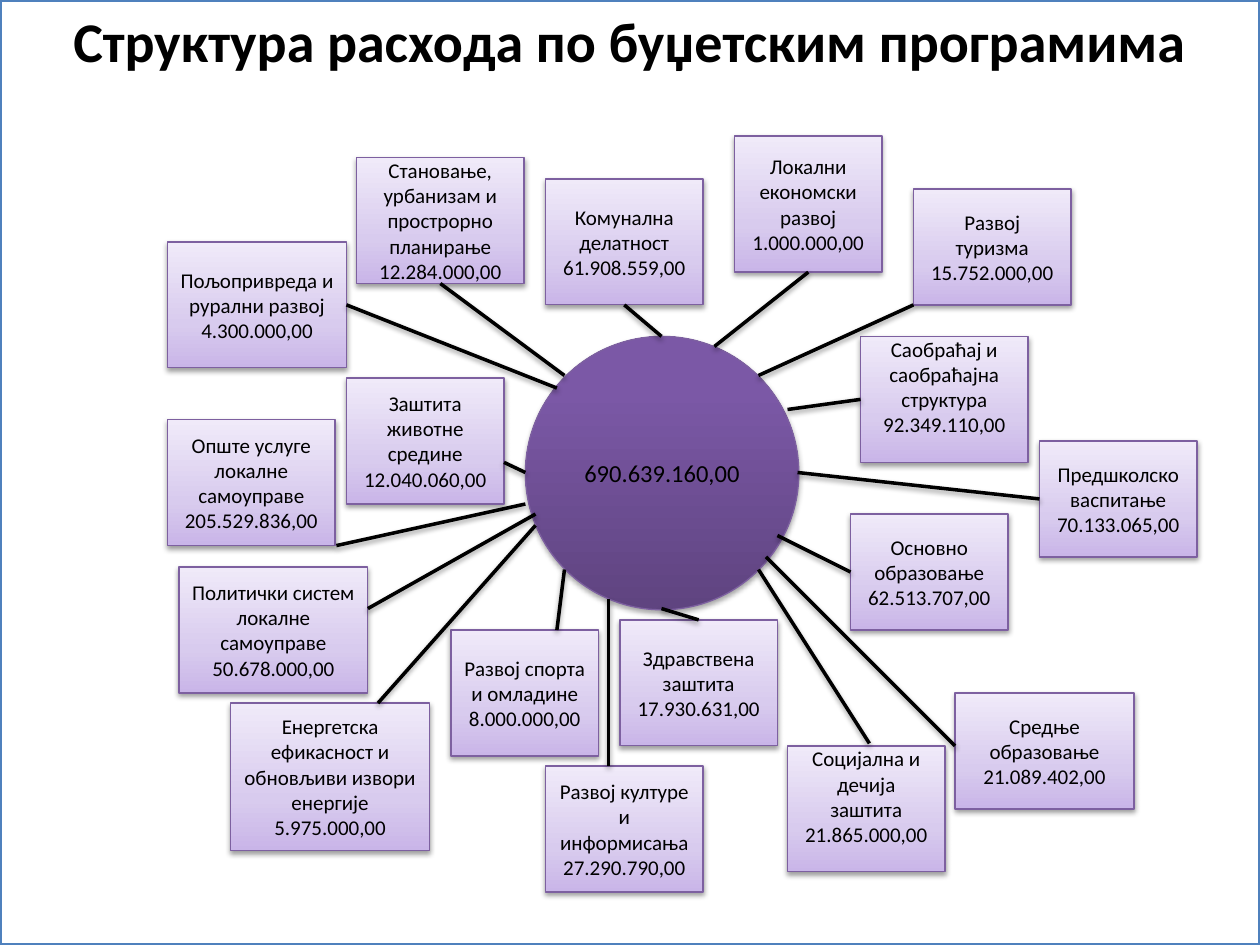
import pptx
import pptx.util
import pptx.dml.color
import pptx.enum.shapes
import pptx.enum.text
import lxml.etree

Inches, Pt = pptx.util.Inches, pptx.util.Pt
RGB = pptx.dml.color.RGBColor.from_string
KIND = pptx.enum.shapes.MSO_SHAPE
ANCHOR = pptx.enum.text.MSO_ANCHOR
CENTER = pptx.enum.text.PP_ALIGN.CENTER
NS = "http://schemas.openxmlformats.org/drawingml/2006/main"

HEX = {"page": "FFFFFF", "frame": "4F81BD", "ink": "000000", "edge": "7D60A0"}
GRADS = {
    "hub": [(0, "5F4480"), (80, "7B58A6"), (100, "7C57A8")],
    "box": [(0, "C9B5E8"), (35, "D8CBEE"), (100, "F0EAF9")],
}
TITLE = "Структура расхода по буџетским програмима"
TOTAL = "690.639.160,00"
HUB = (4.17, 2.67, 2.17, 2.17)
TOP, LEFT, BOTTOM, RIGHT = range(4)

# text, box (left, top, width, height), box side or point, hub point
ITEMS = [
    ("Становање,\nурбанизам и прострорно планирање 12.284.000,00",
     (2.83, 1.25, 1.33, 1), BOTTOM, (4.48, 2.98)),
    ("Комунална делатност 61.908.559,00",
     (4.33, 1.42, 1.25, 1), BOTTOM, (5.25, 2.67)),
    ("Саобраћај и саобраћајна структура\n92.349.110,00",
     (6.83, 2.67, 1.33, 1), LEFT, (6.25, 3.25)),
    ("Локални економски развој 1.000.000,00",
     (5.83, 1.08, 1.17, 1.08), BOTTOM, (5.67, 2.75)),
    ("Пољопривреда и рурални развој 4.300.000,00",
     (1.33, 1.92, 1.42, 1), RIGHT, (4.42, 3.08)),
    ("Опште услуге локалне самоуправе\n205.529.836,00",
     (1.33, 3.33, 1.33, 1), (2.67, 4.33), (4.17, 4)),
    ("Заштита животне средине 12.040.060,00",
     (2.75, 3, 1.25, 1), (4, 3.67), (4.17, 3.75)),
    ("Политички систем локалне самоуправе\n50.678.000,00",
     (1.42, 4.5, 1.5, 1), (2.92, 4.83), (4.25, 4.08)),
    ("Енергетска ефикасност и обновљиви извори енергије\n5.975.000,00",
     (1.83, 5.58, 1.58, 1.17), (3, 5.58), (4.25, 4.17)),
    ("Предшколско васпитање\n70.133.065,00",
     (8.25, 3.5, 1.25, 0.92), LEFT, (6.33, 3.75)),
    ("Основно образовање\n62.513.707,00",
     (6.75, 4.08, 1.25, 0.92), LEFT, (6.17, 4.25)),
    ("Развој туризма\n15.752.000,00",
     (7.25, 1.5, 1.25, 0.92), (7.25, 2.42), (6.02, 2.98)),
    ("Развој културе и информисања\n27.290.790,00",
     (4.33, 6.08, 1.25, 1), (4.83, 6.08), (4.83, 4.75)),
    ("Здравствена заштита\n17.930.631,00",
     (4.92, 4.92, 1.25, 1), TOP, (5.25, 4.83)),
    ("Развој спорта и омладине\n8.000.000,00",
     (3.58, 5, 1.17, 1), (4.42, 5), (4.48, 4.52)),
    ("Социјална и дечија заштита\n21.865.000,00",
     (6.25, 5.92, 1.25, 1), (6.9, 5.9), (6.02, 4.52)),
    ("Средње образовање 21.089.402,00",
     (7.58, 5.5, 1.42, 0.92), (7.58, 5.92), (6.08, 4.42)),
]
RAISED = {"Саобраћај", "Социјална"}


def apply(item, form):
    for key, value in form.items():
        setattr(item, key, value)


def place(item, spot):
    apply(item, dict(zip(("left", "top", "width", "height"), map(Inches, spot))))


def write(shape, text, size, anchor, bold=False):
    frame = shape.text_frame
    frame.text = text
    apply(frame, {"word_wrap": True, "vertical_anchor": anchor,
                  "auto_size": pptx.enum.text.MSO_AUTO_SIZE.NONE})
    for para in frame.paragraphs:
        para.alignment = CENTER
        apply(para.runs[0].font, {"size": Pt(size), "name": "Calibri", "bold": bold})
        para.runs[0].font.color.rgb = RGB(HEX["ink"])


def rule(item, color, width):
    item.line.color.rgb = RGB(HEX[color])
    item.line.width = Pt(width)


def shade(props, alpha, dist):
    props.append(lxml.etree.fromstring(
        f'<a:effectLst xmlns:a="{NS}"><a:outerShdw blurRad="{Pt(3.1)}" '
        f'dist="{Pt(dist)}" dir="5400000" rotWithShape="0"><a:srgbClr val="{HEX["ink"]}">'
        f'<a:alpha val="{alpha * 1000}"/></a:srgbClr></a:outerShdw></a:effectLst>'))


def blend(props, stops):
    marks = "".join(f'<a:gs pos="{pos * 1000}"><a:srgbClr val="{color}"/></a:gs>'
                    for pos, color in stops)
    props.insert(2, lxml.etree.fromstring(
        f'<a:gradFill xmlns:a="{NS}" rotWithShape="1"><a:gsLst>{marks}</a:gsLst>'
        '<a:lin ang="16200000" scaled="0"/></a:gradFill>'))


def node(slide, kind, spot, text, size, grad, alpha, dist):
    shape = slide.shapes.add_shape(kind, *map(Inches, spot))
    rule(shape, "edge", 0.75)
    props = shape.element.spPr
    blend(props, GRADS[grad])
    shade(props, alpha, dist)
    write(shape, text, size, ANCHOR.MIDDLE)
    return shape


def link(slide, box, end, start):
    goal = start if isinstance(end, int) else end
    line = slide.shapes.add_connector(
        pptx.enum.shapes.MSO_CONNECTOR.STRAIGHT, *map(Inches, start + goal))
    if isinstance(end, int):
        line.end_connect(box, end)
    rule(line, "ink", 2)
    shade(line.element.spPr, 38, 1.6)


def main():
    deck = pptx.Presentation()
    apply(deck, {"slide_width": Inches(10), "slide_height": Inches(7.5)})
    slide = deck.slides.add_slide(deck.slide_layouts[5])
    title = slide.shapes.title
    place(title, (0, 0, 10, 7.5))
    title.fill.solid()
    title.fill.fore_color.rgb = RGB(HEX["page"])
    rule(title, "frame", 2)
    write(title, TITLE, 32, ANCHOR.TOP, True)

    node(slide, KIND.OVAL, HUB, TOTAL, 14, "hub", 35, 1.8)
    boxes = []
    for text, spot, end, start in ITEMS:
        box = node(slide, KIND.RECTANGLE, spot, text, 12, "box", 38, 1.6)
        if text.split()[0] in RAISED:
            box.text_frame.margin_bottom = Inches(0.25)
        boxes.append(box)
    for box, (text, spot, end, start) in zip(boxes, ITEMS):
        link(slide, box, end, start)
    deck.save("out.pptx")


if __name__ == "__main__":
    main()
